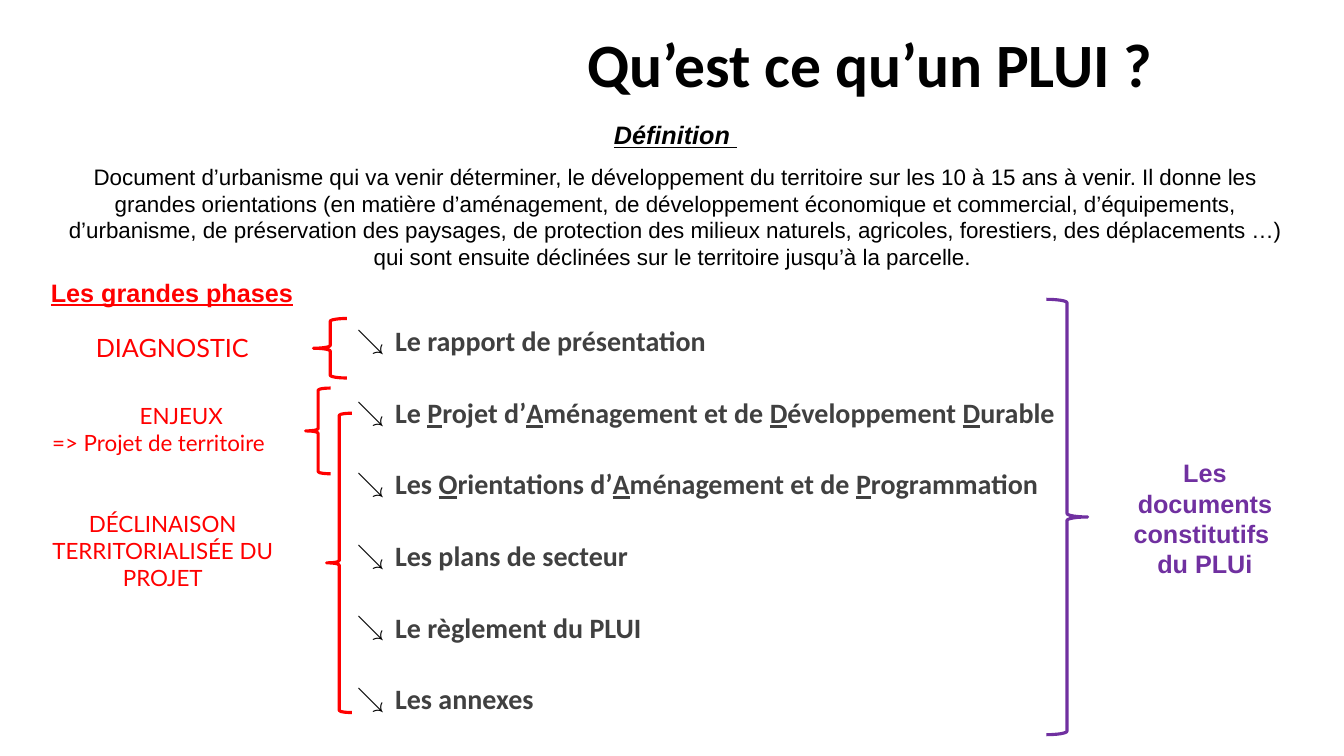
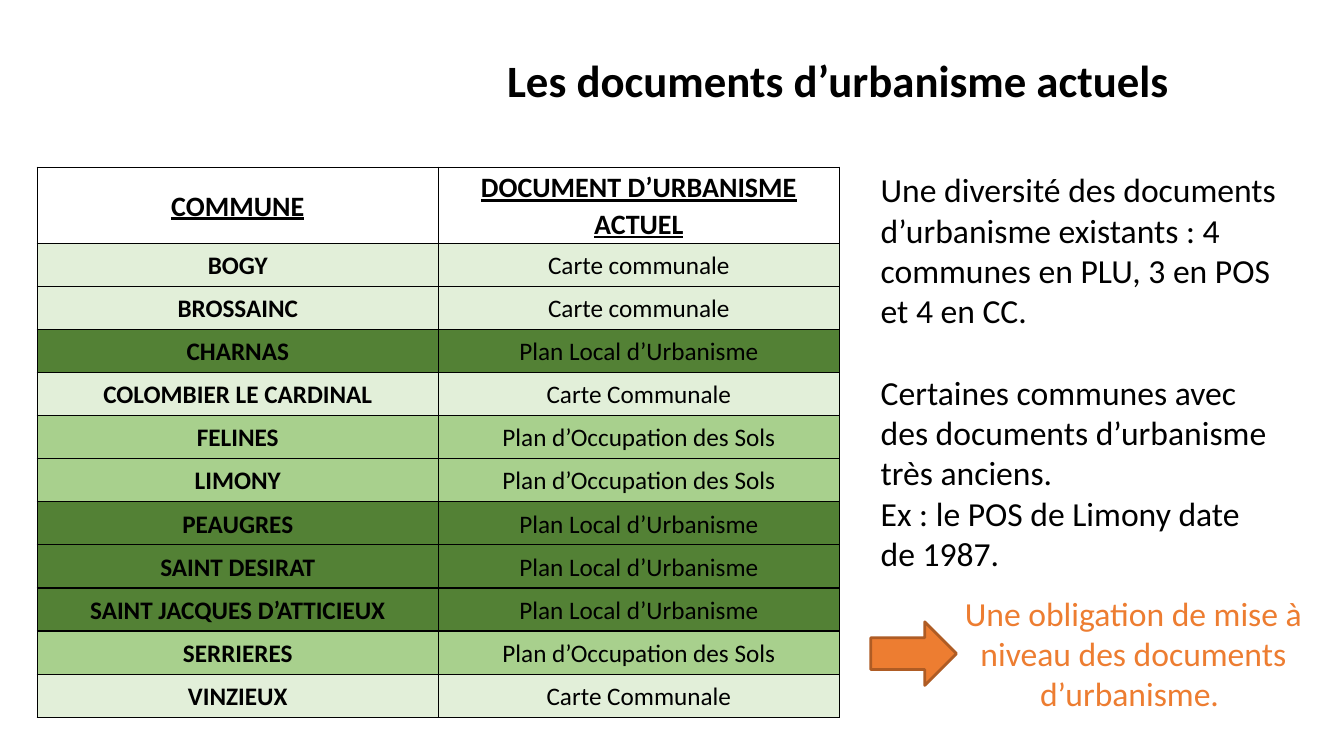
from dataclasses import dataclass, replace

from lxml.etree import SubElement
from pptx import Presentation
from pptx.dml.color import RGBColor
from pptx.enum.shapes import MSO_SHAPE as Preset
from pptx.enum.text import MSO_ANCHOR as Anchor, MSO_AUTO_SIZE as AutoSize, PP_ALIGN as Align
from pptx.oxml.ns import qn
from pptx.util import Pt


@dataclass(frozen=True)
class TextStyle:
    size: float
    color: str = "000000"
    font: str = "Calibri"
    bold: bool = False
    italic: bool = False
    underline: bool = False


@dataclass(frozen=True)
class Theme:
    black: str = "000000"
    grey: str = "404040"
    red: str = "FF0000"
    purple: str = "7030A0"
    orange: str = "ED7D31"
    dark_orange: str = "AF5C24"
    title: TextStyle = TextStyle(44, bold=True)
    long_title: TextStyle = TextStyle(32, bold=True)
    heading: TextStyle = TextStyle(18, font="Arial", bold=True)
    definition: TextStyle = TextStyle(16, font="Arial")
    component: TextStyle = TextStyle(20, color=grey, bold=True)
    first_phase: TextStyle = TextStyle(18, color=red, font="Lato")
    phase: TextStyle = TextStyle(16, color=red, font="Lato")
    table_head: TextStyle = TextStyle(20, bold=True, underline=True)
    table_body: TextStyle = TextStyle(18)
    remark: TextStyle = TextStyle(24)


THEME = Theme()

DEFINITION = (
    "Document d’urbanisme qui va venir déterminer, le développement du territoire sur les "
    "10 à 15 ans à venir. Il donne les grandes orientations (en matière d’aménagement, de "
    "développement économique et commercial, d’équipements, d’urbanisme, de préservation des "
    "paysages, de protection des milieux naturels, agricoles, forestiers, des déplacements …) "
    "qui sont ensuite déclinées sur le territoire jusqu’à la parcelle. "
)

# Letters between underscores are underlined.
COMPONENTS = [
    "Le rapport de présentation",
    "Le _P_rojet d’_A_ménagement et de _D_éveloppement _D_urable",
    "Les _O_rientations d’_A_ménagement et de _P_rogrammation",
    "Les plans de secteur",
    "Le règlement du PLUI",
    "Les annexes",
]

HEADERS = ("COMMUNE", "DOCUMENT D’URBANISME ACTUEL")
COMMUNES = [
    ("BOGY", "Carte communale"),
    ("BROSSAINC", "Carte communale"),
    ("CHARNAS", "Plan Local d’Urbanisme"),
    ("COLOMBIER LE CARDINAL", "Carte Communale"),
    ("FELINES", "Plan d’Occupation des Sols"),
    ("LIMONY", "Plan d’Occupation des Sols"),
    ("PEAUGRES", "Plan Local d’Urbanisme"),
    ("SAINT DESIRAT", "Plan Local d’Urbanisme"),
    ("SAINT JACQUES D’ATTICIEUX", "Plan Local d’Urbanisme"),
    ("SERRIERES", "Plan d’Occupation des Sols"),
    ("VINZIEUX", "Carte Communale"),
]
DOCUMENT_FILLS = {
    "carte communale": "E2EFD9",
    "plan d’occupation des sols": "A8D08D",
    "plan local d’urbanisme": "538135",
}


def rgb(color):
    return RGBColor.from_string(color)


def points(lengths):
    return [Pt(length) for length in lengths]


def add_run(paragraph, text, style):
    run = paragraph.add_run()
    run.text = text
    font = run.font
    font.name, font.size = style.font, Pt(style.size)
    font.bold, font.italic, font.underline = style.bold, style.italic, style.underline
    font.color.rgb = rgb(style.color)


def add_title(slide, box, text, style, line_spacing=1.0):
    title = slide.shapes.title
    title.left, title.top, title.width, title.height = points(box)
    frame = title.text_frame
    frame.auto_size, frame.word_wrap = AutoSize.NONE, True
    frame.vertical_anchor = Anchor.TOP
    paragraph = frame.paragraphs[0]
    paragraph.alignment, paragraph.line_spacing = Align.LEFT, line_spacing
    add_run(paragraph, text, style)


def add_text_box(slide, box):
    frame = slide.shapes.add_textbox(*points(box)).text_frame
    frame.word_wrap = True
    return frame


def next_paragraph(frame):
    """Return the empty first paragraph, or a new one once that has text."""
    first = frame.paragraphs[0]
    return frame.add_paragraph() if first.runs else first


def add_paragraph(frame, text, style, align=Align.CENTER, space_before=0):
    paragraph = next_paragraph(frame)
    paragraph.alignment, paragraph.space_before = align, Pt(space_before)
    add_run(paragraph, text, style)


def add_label(slide, box, text, style):
    add_paragraph(add_text_box(slide, box), text, style)


def set_bullet(paragraph, char, color, indent):
    properties = paragraph._p.get_or_add_pPr()
    properties.set("marL", str(Pt(indent)))
    properties.set("indent", str(-Pt(indent)))
    bullet_color = SubElement(properties, qn("a:buClr"))
    SubElement(bullet_color, qn("a:srgbClr"), val=color)
    SubElement(properties, qn("a:buFont"), typeface="Arial")
    SubElement(properties, qn("a:buChar"), char=char)


def add_component_list(slide, box, components):
    frame = add_text_box(slide, box)
    frame.margin_top = frame.margin_bottom = Pt(7.2)
    styles = (THEME.component, replace(THEME.component, underline=True))
    for index, component in enumerate(components):
        paragraph = next_paragraph(frame)
        set_bullet(paragraph, "↘", THEME.black, 27.4)
        paragraph.line_spacing = 0.9
        paragraph.space_before = Pt(29.5 if index else 0)
        for position, part in enumerate(component.split("_")):
            add_run(paragraph, part, styles[position % 2])


def add_preset(slide, preset, box, line_color, line_width, fill=None):
    shape = slide.shapes.add_shape(preset, *points(box))
    shape.shadow.inherit = False
    shape.line.color.rgb, shape.line.width = rgb(line_color), Pt(line_width)
    if fill:
        shape.fill.solid()
        shape.fill.fore_color.rgb = rgb(fill)
    else:
        shape.fill.background()


def add_brace(slide, preset, box, color):
    add_preset(slide, preset, box, color, 2.25)


def set_borders(cell, color, width):
    properties = cell._tc.get_or_add_tcPr()
    for side in ("a:lnL", "a:lnR", "a:lnT", "a:lnB"):
        border = SubElement(properties, qn(side), w=str(Pt(width)))
        fill = SubElement(border, qn("a:solidFill"))
        SubElement(fill, qn("a:srgbClr"), val=color)


def fill_cell(cell, text, style, fill=None):
    set_borders(cell, THEME.black, 1)
    if fill:
        cell.fill.solid()
        cell.fill.fore_color.rgb = rgb(fill)
    else:
        cell.fill.background()
    cell.vertical_anchor = Anchor.MIDDLE
    cell.margin_left = cell.margin_right = Pt(5)
    cell.margin_top = cell.margin_bottom = 0
    paragraph = cell.text_frame.paragraphs[0]
    paragraph.alignment, paragraph.line_spacing = Align.CENTER, 1.07
    add_run(paragraph, text, style)


def add_commune_table(slide, left, top, width, head_height, row_height):
    height = head_height + row_height * len(COMMUNES)
    box = points((left, top, width, height))
    table = slide.shapes.add_table(len(COMMUNES) + 1, len(HEADERS), *box).table
    table.first_row = table.horz_banding = False
    for row in table.rows:
        row.height = Pt(row_height)
    table.rows[0].height = Pt(head_height)
    for column, header in enumerate(HEADERS):
        fill_cell(table.cell(0, column), header, THEME.table_head)
    for row, (commune, document) in enumerate(COMMUNES, start=1):
        fill = DOCUMENT_FILLS[document.lower()]
        fill_cell(table.cell(row, 0), commune, replace(THEME.table_body, bold=True), fill)
        fill_cell(table.cell(row, 1), document, THEME.table_body, fill)


def build_definition_slide(slide):
    add_title(slide, (412.5, 15, 540, 78), "Qu’est ce qu’un PLUI ?", THEME.title)

    definition = add_text_box(slide, (37.5, 82, 890, 120))
    add_paragraph(definition, "Définition ",
                  replace(THEME.heading, italic=True, underline=True))
    add_paragraph(definition, DEFINITION, THEME.definition, space_before=9.2)

    add_label(slide, (9.4, 194.4, 226.8, 29), "Les grandes phases",
              replace(THEME.heading, color=THEME.red, underline=True))
    add_label(slide, (30.2, 234, 185.8, 29), "DIAGNOSTIC", THEME.first_phase)
    issues = add_text_box(slide, (30.2, 283.7, 198.7, 46))
    add_paragraph(issues, "ENJEUX", THEME.phase)
    add_paragraph(issues, "=> Projet de territoire", THEME.phase, Align.LEFT)
    add_label(slide, (16.6, 360.7, 199.4, 65.5),
              "DÉCLINAISON TERRITORIALISÉE DU PROJET", THEME.phase)

    add_component_list(slide, (247.7, 226.8, 520, 300), COMPONENTS)
    for phase_box in ((224, 227.5, 23.8, 42.5), (218.2, 277.2, 18, 61.2),
                      (233.3, 295.2, 18, 213.8)):
        add_brace(slide, Preset.LEFT_BRACE, phase_box, THEME.red)

    add_brace(slide, Preset.RIGHT_BRACE, (747.4, 213.8, 29.5, 311), THEME.purple)
    documents = add_text_box(slide, (792.7, 323.3, 136, 94.3))
    for line in ("Les documents constitutifs ", "du PLUi"):
        add_paragraph(documents, line, replace(THEME.heading, color=THEME.purple))


def build_documents_slide(slide):
    add_title(slide, (355, 38.2, 550, 79), "Les documents d’urbanisme actuels",
              THEME.long_title, line_spacing=0.9)
    add_commune_table(slide, 26.6, 119.5, 573, head_height=54.2, row_height=30.8)

    remarks = add_text_box(slide, (622, 117.4, 300.2, 298))
    for text, space_before in (
        ("Une diversité des documents d’urbanisme existants : 4 communes en PLU, "
         "3 en POS et 4 en CC.", 0),
        ("Certaines communes avec des documents d’urbanisme très anciens.", 29.3),
        ("Ex : le POS de Limony date de 1987.", 0),
    ):
        add_paragraph(remarks, text, THEME.remark, Align.LEFT, space_before)

    add_preset(slide, Preset.RIGHT_ARROW, (622, 444.2, 61.2, 45.4),
               THEME.dark_orange, 2, THEME.orange)
    add_label(slide, (659.5, 419.8, 300.2, 94.3),
              "Une obligation de mise à niveau des documents d’urbanisme. ",
              replace(THEME.remark, color=THEME.orange))


def main():
    deck = Presentation()
    deck.slide_width, deck.slide_height = Pt(960), Pt(540)
    title_only = deck.slide_layouts.get_by_name("Title Only")
    for build in (build_definition_slide, build_documents_slide):
        build(deck.slides.add_slide(title_only))
    deck.save("out.pptx")


if __name__ == "__main__":
    main()
